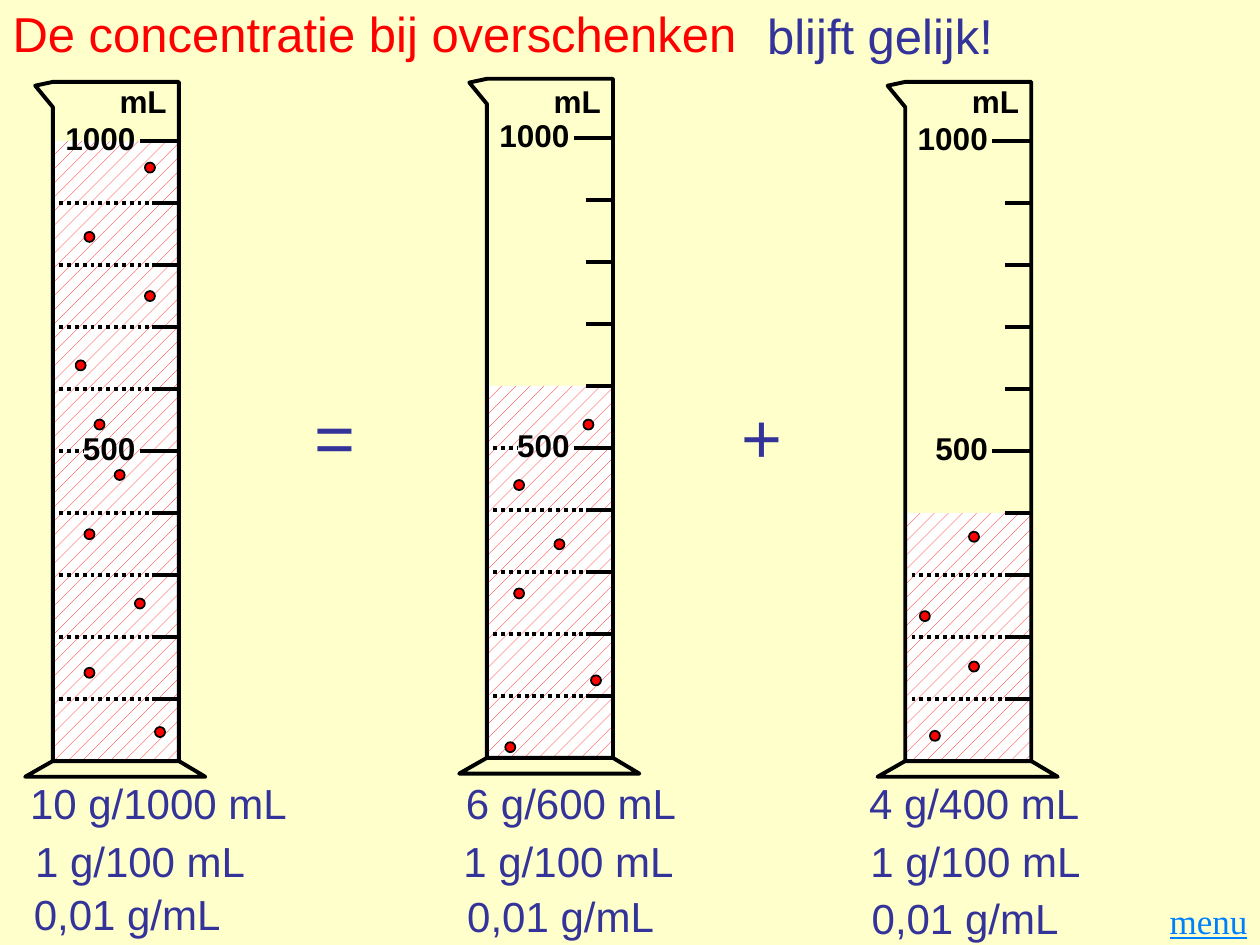
"""Build a slide that compares the concentration in three measuring cylinders."""
from lxml.etree import SubElement
from pptx import Presentation
from pptx.dml.color import RGBColor as Rgb
from pptx.enum.dml import MSO_LINE as Dash, MSO_PATTERN as Pattern
from pptx.enum.shapes import MSO_CONNECTOR as Connector, MSO_SHAPE as Preset
from pptx.enum.text import MSO_ANCHOR as Anchor, MSO_AUTO_SIZE as AutoSize, PP_ALIGN as Align
from pptx.oxml.ns import qn
from pptx.util import Inches, Pt

COLUMNS, ROWS = 100, 75
CELL = Inches(10) / COLUMNS
COLORS = {"paper": "FFFFCC", "white": "FFFFFF", "ink": "000000", "red": "FF0000",
          "blue": "333399", "link": "0080FF"}
FORMATS = {
    "title": {"size": Pt(28), "name": "Arial", "bold": False},
    "caption": {"size": Pt(24), "name": "Arial"},
    "operator": {"size": Pt(40), "name": "Arial"},
    "scale": {"size": Pt(18), "name": "Arial", "bold": True},
    "link": {"size": Pt(20), "name": "Times New Roman", "underline": True},
}
FULL_ROW, BOTTOM_ROW, STEPS = 11.2, 60.4, 10
STEP = (BOTTOM_ROW - FULL_ROW) / STEPS
BODY_WIDTH = 10
CYLINDERS = [
    {"left": 4.2, "shift": 0, "filled": 10, "grains": [
        (11.5, 12.9), (6.7, 18.4), (11.5, 23.1), (6, 28.6), (7.5, 33.3),
        (9.1, 37.3), (6.7, 42), (10.7, 47.5), (6.7, 53), (12.3, 57.7)]},
    {"left": 38.65, "shift": -0.25, "filled": 6, "grains": [
        (46.3, 33.3), (40.8, 38.1), (44, 42.8), (40.8, 46.7), (46.9, 53.6), (40.1, 58.9)]},
    {"left": 71.85, "shift": 0, "filled": 4, "grains": [
        (76.9, 42.2), (73, 48.5), (76.9, 52.5), (73.8, 58)]},
]
CAPTIONS = [
    (34.6, [("10 g/1000 mL", 1.4, 61.1), ("6 g/600 mL", 36, 61.1), ("4 g/400 mL", 68, 61.1)]),
    (36, [("1 g/100 mL", 1.8, 65.7), ("1 g/100 mL", 35.8, 65.7), ("1 g/100 mL", 68.1, 65.7)]),
    (20.3, [("0,01 g/mL", 1.7, 69.9), ("0,01 g/mL", 36.1, 70.1), ("0,01 g/mL", 68.2, 70.2)]),
]


def cells(*counts):
    """Turn counts of grid cells into lengths."""
    return [round(count * CELL) for count in counts]


def color(name):
    """Look up a named colour."""
    return Rgb.from_string(COLORS[name])


def write(shape, text, style, ink, align=Align.LEFT):
    """Put one formatted line of text in a shape."""
    frame = shape.text_frame
    for name, value in {"word_wrap": True, "auto_size": AutoSize.NONE,
                        "vertical_anchor": Anchor.MIDDLE}.items():
        setattr(frame, name, value)
    paragraph = frame.paragraphs[0]
    paragraph.alignment = align
    run = paragraph.add_run()
    run.text = text
    for name, value in FORMATS[style].items():
        setattr(run.font, name, value)
    run.font.color.rgb = color(ink)


def add_label(shapes, box, text, style, ink, align=Align.LEFT):
    """Add a text box on the grid."""
    write(shapes.add_textbox(*cells(*box)), text, style, ink, align)


def add_line(shapes, left, right, row, dash=None):
    """Add a horizontal scale line."""
    line = shapes.add_connector(Connector.STRAIGHT, *cells(left, row, right, row))
    line.line.color.rgb = color("ink")
    line.line.width = Pt(2.25)
    if dash:
        line.line.dash_style = dash
    SubElement(line._element.spPr, qn("a:effectLst"))


def add_outline(shapes, points, close):
    """Add an unfilled glass outline through grid points."""
    start, *rest = [cells(*point) for point in points]
    builder = shapes.build_freeform(*start)
    builder.add_line_segments(rest, close=close)
    outline = builder.convert_to_shape()
    outline.shadow.inherit = False
    outline.fill.background()
    outline.line.color.rgb = color("ink")
    outline.line.width = Pt(2.25)


def add_liquid(shapes, left, top, bottom):
    """Add the patterned liquid."""
    liquid = shapes.add_shape(Preset.RECTANGLE, *cells(left + 0.1, top, BODY_WIDTH - 0.2, bottom - top))
    liquid.shadow.inherit = False
    liquid.line.fill.background()
    liquid.fill.patterned()
    liquid.fill.pattern = Pattern.PERCENT_10
    liquid.fill.fore_color.rgb = color("red")
    liquid.fill.back_color.rgb = color("white")


def add_grain(shapes, left, top):
    """Add one dissolved grain."""
    grain = shapes.add_shape(Preset.OVAL, *cells(left, top, 0.8, 0.8))
    grain.shadow.inherit = False
    grain.fill.solid()
    grain.fill.fore_color.rgb = color("red")
    grain.line.color.rgb = color("ink")
    grain.line.width = Pt(1)


def add_cylinder(slide, left, shift, filled, grains):
    """Add a measuring cylinder with its scale and contents."""
    shapes = slide.shapes.add_group_shape().shapes
    right, bottom, rim = left + BODY_WIDTH, BOTTOM_ROW + shift, 6.5 + shift
    add_liquid(shapes, left, bottom - filled * STEP, bottom)
    add_outline(shapes, [(left, bottom), (right, bottom), (right, rim), (left, rim),
                         (left - 1.4, rim + 0.3), (left, rim + 2)], True)
    add_outline(shapes, [(right, bottom), (right + 2.1, bottom + 1.25),
                         (left - 2.2, bottom + 1.25), (left, bottom)], False)
    for level in range(1, STEPS + 1):
        row = bottom - level * STEP
        add_line(shapes, right - (2.1 if level % 5 else 3.1), right, row)
        if level < filled:
            add_line(shapes, left + 0.5, left + (7.7 if level % 5 else 2.5), row, Dash.ROUND_DOT)
    for text, indent, level in [("1000", 0, 10), ("500", 1.4, 5)]:
        row = bottom - level * STEP - 1.8
        add_label(shapes, (left + indent, row, 10.2, 3.1), text, "scale", "ink")
    add_label(shapes, (left + 4.3, 6, 7.1, 4), "mL", "scale", "ink")
    for grain in grains:
        add_grain(shapes, *grain)


def add_title(slide, text):
    """Place and format the title placeholder."""
    title = slide.shapes.title
    for name, value in zip(("left", "top", "width", "height"), cells(0, 0, 67.3, 5.2)):
        setattr(title, name, value)
    write(title, text, "title", "red")


def main():
    """Build and save the presentation."""
    presentation = Presentation()
    presentation.slide_width, presentation.slide_height = cells(COLUMNS, ROWS)
    slide = presentation.slides.add_slide(presentation.slide_layouts[5])
    slide.background.fill.solid()
    slide.background.fill.fore_color.rgb = color("paper")
    for cylinder in CYLINDERS:
        add_cylinder(slide, **cylinder)
    add_title(slide, "De concentratie bij overschenken")
    add_label(slide.shapes, (59.9, 0.2, 35.1, 5.2), "blijft gelijk!", "title", "blue")
    for width, captions in CAPTIONS:
        for text, left, top in captions:
            add_label(slide.shapes, (left, top, width, 5.2), text, "caption", "blue")
    for text, left in [("=", 24), ("+", 57.9)]:
        add_label(slide.shapes, (left, 31.1, 8.3, 7), text, "operator", "blue")
    add_label(slide.shapes, (89, 71.1, 11, 3.9), "menu", "link", "link", Align.RIGHT)
    presentation.save("out.pptx")


if __name__ == "__main__":
    main()
